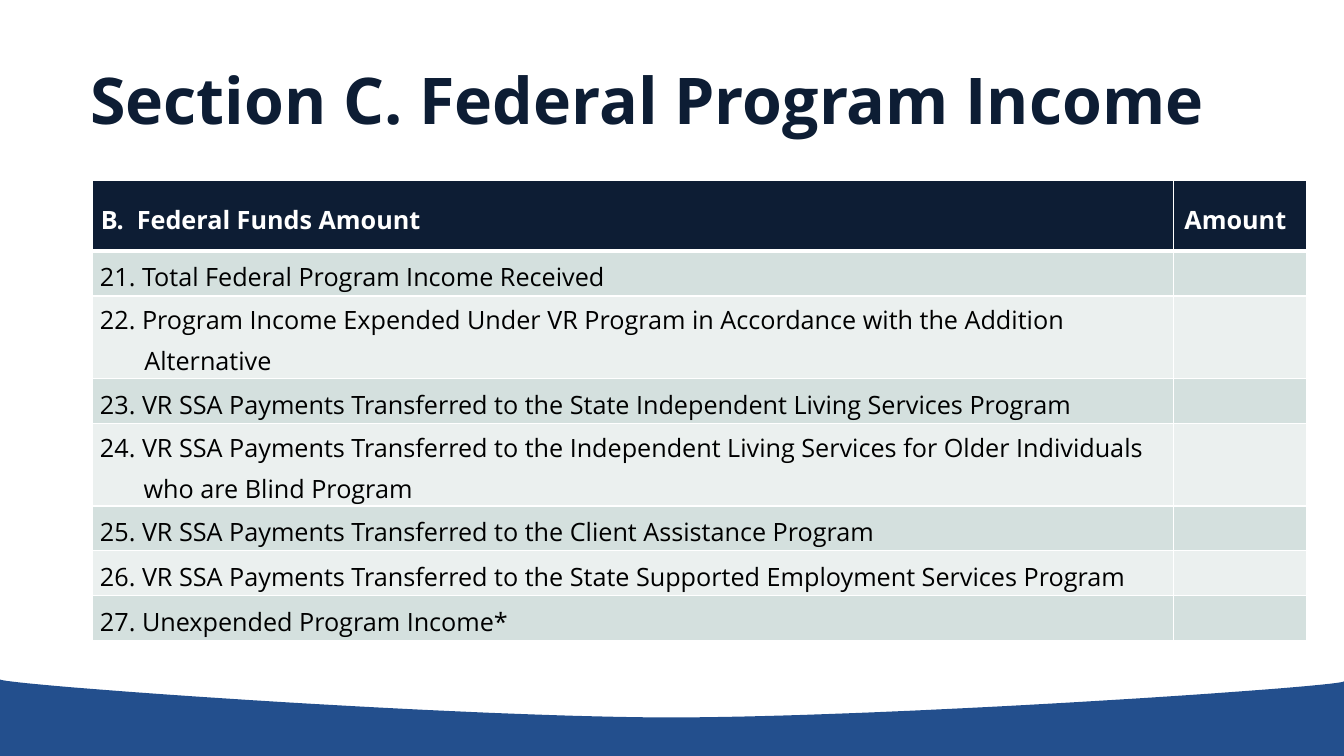
from lxml.etree import SubElement
from pptx import Presentation
from pptx.dml.color import RGBColor
from pptx.enum.text import MSO_ANCHOR as Anchor
from pptx.oxml.ns import qn
from pptx.util import Cm, Pt

COLORS = {
    "navy": "0D1D34",
    "wave": "234F8D",
    "white": "FFFFFF",
    "black": "000000",
    "dark_band": "D4E0DE",
    "light_band": "EBF0EF",
}
FONT = "Open Sans"


def write(frame, text, size=18, color="black", bold=False, spacing=1.2, hanging=0):
    para = frame.paragraphs[0]
    if hanging:
        properties = para._p.get_or_add_pPr()
        properties.set("marL", str(Cm(hanging)))
        properties.set("indent", str(-Cm(hanging)))
    para.line_spacing = spacing
    para.font.size = Pt(size)
    if text:
        span = para.add_run()
        span.text = text
        span.font.name = FONT
        span.font.size = Pt(size)
        span.font.bold = bold
        span.font.color.rgb = RGBColor.from_string(COLORS[color])


def add_border(cell, side, width):
    line = SubElement(cell._tc.get_or_add_tcPr(), qn(f"a:ln{side}"), w=str(Pt(width)))
    fill = SubElement(line, qn("a:solidFill"))
    SubElement(fill, qn("a:srgbClr"), val=COLORS["white"])


deck = Presentation()
deck.slide_width = Cm(33.87)
deck.slide_height = Cm(19.05)
page = deck.slides.add_slide(deck.slide_layouts[6])

wave_curves = [
    [(0, 17.12), (0, 17.25), (11.18, 18.06), (16.81, 18.08)],
    [(16.81, 18.08), (22.48, 18.08), (33.87, 17.3), (33.87, 17.17)],
]
steps = 40
wave_points = []
for start, pull, push, end in wave_curves:
    for step in range(1, steps + 1):
        t = step / steps
        weights = [(1 - t) ** 3, 3 * t * (1 - t) ** 2, 3 * t**2 * (1 - t), t**3]
        wave_points.append(tuple(
            Cm(sum(weight * point[axis] for weight, point in zip(weights, (start, pull, push, end))))
            for axis in (0, 1)
        ))
builder = page.shapes.build_freeform(Cm(0), Cm(17.12))
builder.add_line_segments(wave_points + [(Cm(33.87), Cm(19.05)), (Cm(0), Cm(19.05))])
wave = builder.convert_to_shape()
wave.shadow.inherit = False
wave.fill.solid()
wave.fill.fore_color.rgb = RGBColor.from_string(COLORS["wave"])
wave.line.fill.background()

title = page.shapes.add_textbox(Cm(2.03), Cm(1.02), Cm(29.87), Cm(2.57)).text_frame
title.word_wrap = True
title.vertical_anchor = Anchor.BOTTOM
write(title, "Section C. Federal Program Income", size=46, color="navy", bold=True, spacing=1.02)

rows = [
    ("B.  Federal Funds Amount", "Amount"),
    ("21. Total Federal Program Income Received", ""),
    ("22. Program Income Expended Under VR Program in Accordance with the Addition Alternative", ""),
    ("23. VR SSA Payments Transferred to the State Independent Living Services Program", ""),
    ("24. VR SSA Payments Transferred to the Independent Living Services for Older Individuals who are Blind Program", ""),
    ("25. VR SSA Payments Transferred to the Client Assistance Program", ""),
    ("26. VR SSA Payments Transferred to the State Supported Employment Services Program", ""),
    ("27. Unexpended Program Income*", ""),
]
hanging_indents = {2: 1.12, 4: 1.1}
heights = [1.78] + [2.08 if row in hanging_indents else 1.13 for row in range(1, len(rows))]
table = page.shapes.add_table(
    len(rows), 2, Cm(2.34), Cm(4.55), Cm(30.58), Cm(sum(heights))
).table
table.columns[0].width = Cm(27.23)
table.columns[1].width = Cm(3.35)

for row_index, texts in enumerate(rows):
    header = row_index == 0
    table.rows[row_index].height = Cm(heights[row_index])
    band = "navy" if header else "dark_band" if row_index % 2 else "light_band"
    for column_index, text in enumerate(texts):
        cell = table.cell(row_index, column_index)
        cell.vertical_anchor = Anchor.MIDDLE
        if column_index == 0:
            cell.margin_left = cell.margin_right = Cm(0.2 if header else 0.18)
            cell.margin_top = cell.margin_bottom = Cm(0)
        else:
            cell.margin_left = cell.margin_right = Cm(0.28)
            cell.margin_top = cell.margin_bottom = Cm(0.13)
        for side in "LRTB":
            below_header = (row_index, side) in [(0, "B"), (1, "T")]
            add_border(cell, side, 3 if below_header else 1)
        cell.fill.solid()
        cell.fill.fore_color.rgb = RGBColor.from_string(COLORS[band])
        write(
            cell.text_frame,
            text,
            color="white" if header else "black",
            bold=header,
            spacing=1.2 if text else 1,
            hanging=hanging_indents.get(row_index, 0) if text else 0,
        )

deck.save("out.pptx")
